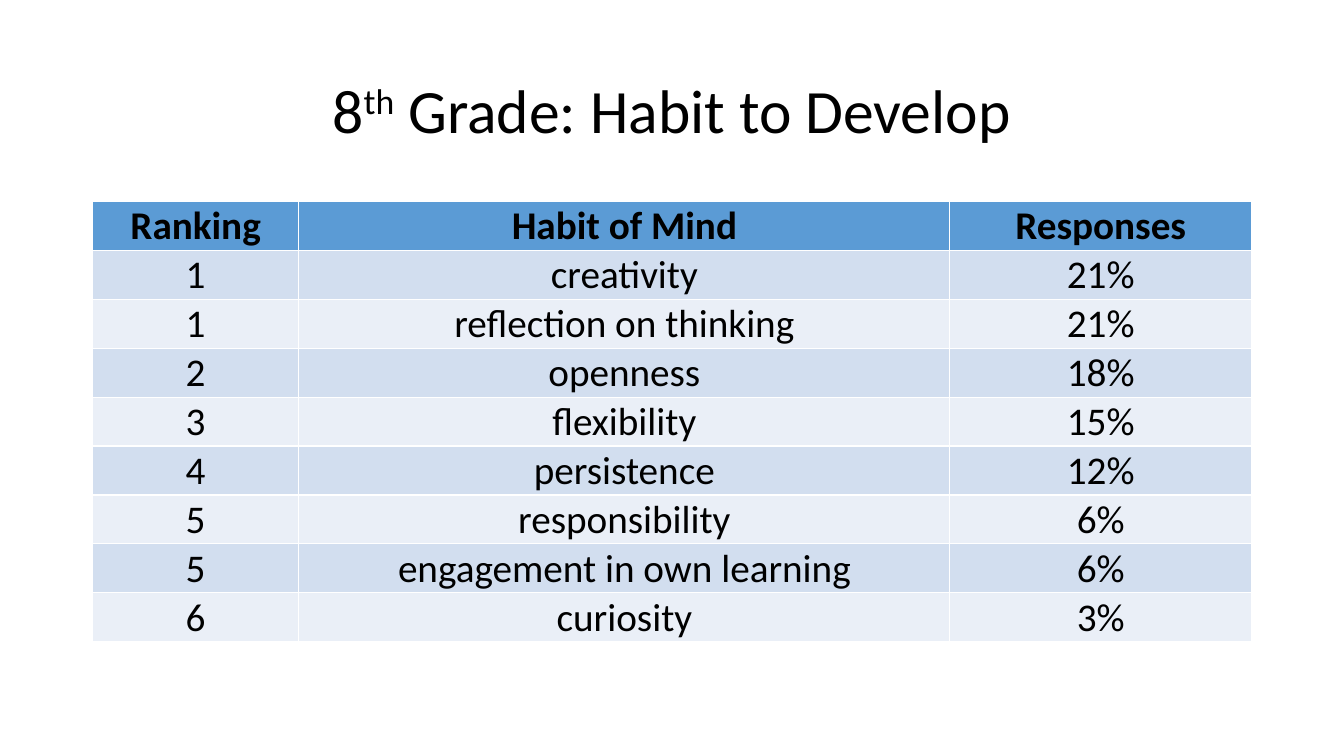
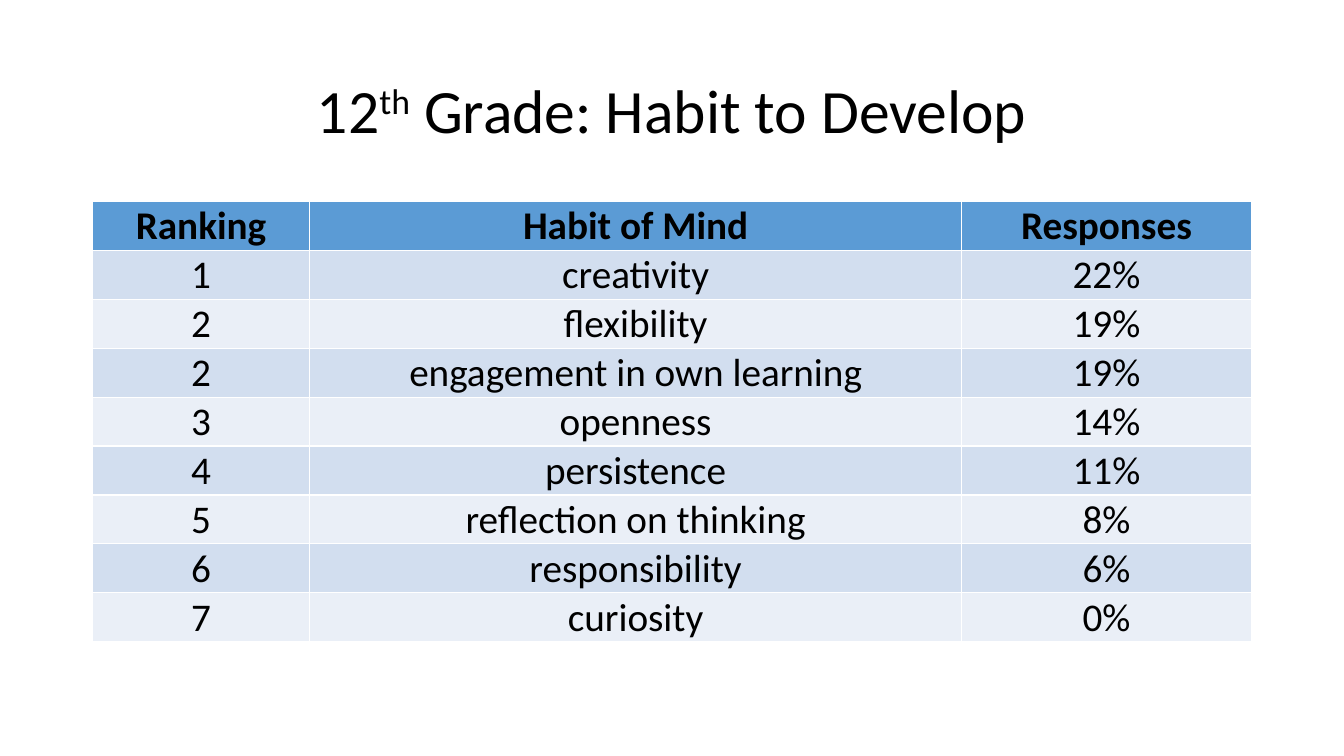
import dataclasses

import pptx
import pptx.dml.color
import pptx.enum.text
import pptx.util

Pt = pptx.util.Pt
Rgb = pptx.dml.color.RGBColor.from_string
Align = pptx.enum.text.PP_ALIGN
Anchor = pptx.enum.text.MSO_ANCHOR
Fit = pptx.enum.text.MSO_AUTO_SIZE


@dataclasses.dataclass(frozen=True)
class Theme:
    face: str = "Calibri"
    ink: str = "000000"
    head: str = "5B9BD5"
    bands: tuple = ("D2DEEF", "EAEFF7")
    big: int = 44
    body: int = 28


class Deck:
    """Build ranking slides that share one theme."""

    left, width = 66, 828

    def __init__(self, theme):
        self.theme = theme
        self.file = pptx.Presentation()
        self.file.slide_width = Pt(960)
        self.file.slide_height = Pt(540)
        self.slide = None

    def add(self):
        self.slide = self.file.slides.add_slide(self.file.slide_layouts[5])

    def style(self, run, size, bold=False):
        font = run.font
        font.name = self.theme.face
        font.size = Pt(size)
        font.bold = bold
        font.color.rgb = Rgb(self.theme.ink)

    def title(self, grade):
        shape = self.slide.shapes.title
        shape.left, shape.top = Pt(self.left), Pt(28.8)
        shape.width, shape.height = Pt(self.width), Pt(104.4)
        frame = shape.text_frame
        frame.auto_size = Fit.NONE
        frame.vertical_anchor = Anchor.MIDDLE
        para = frame.paragraphs[0]
        para.alignment = Align.CENTER
        para.line_spacing = 0.9
        for text, base in ((grade, 0), ("th", 30000), (" Grade: Habit to Develop", 0)):
            run = para.add_run()
            run.text = text
            self.style(run, self.theme.big)
            if base:
                run._r.get_or_add_rPr().set("baseline", str(base))

    def cell(self, cell, text, fill, bold):
        cell.fill.solid()
        cell.fill.fore_color.rgb = Rgb(fill)
        cell.vertical_anchor = Anchor.BOTTOM
        cell.margin_left = cell.margin_right = cell.margin_top = Pt(0.7)
        cell.margin_bottom = 0
        cell.text_frame.text = text
        para = cell.text_frame.paragraphs[0]
        para.alignment = Align.CENTER
        self.style(para.runs[0], self.theme.body, bold)

    def table(self, rows, rank, habit):
        rows = [("Ranking", "Habit of Mind", "Responses"), *rows]
        grid = self.slide.shapes.add_table(
            len(rows), 3, Pt(self.left), Pt(144), Pt(self.width), Pt(309)
        ).table
        for col, wide in zip(grid.columns, (rank, habit, self.width - rank - habit)):
            col.width = Pt(wide)
        for y, row in enumerate(rows):
            fill = self.theme.bands[(y - 1) % 2] if y else self.theme.head
            for x, text in enumerate(row):
                self.cell(grid.cell(y, x), text, fill, y == 0)


EIGHTH = [
    ("1", "creativity", "21%"),
    ("1", "reflection on thinking", "21%"),
    ("2", "openness", "18%"),
    ("3", "flexibility", "15%"),
    ("4", "persistence", "12%"),
    ("5", "responsibility", "6%"),
    ("5", "engagement in own learning", "6%"),
    ("6", "curiosity", "3%"),
]
TWELFTH = [
    ("1", "creativity", "22%"),
    ("2", "flexibility", "19%"),
    ("2", "engagement in own learning", "19%"),
    ("3", "openness", "14%"),
    ("4", "persistence", "11%"),
    ("5", "reflection on thinking", "8%"),
    ("6", "responsibility", "6%"),
    ("7", "curiosity", "0%"),
]


def main():
    deck = Deck(Theme())
    for grade, rows, rank, habit in (
        ("8", EIGHTH, 147.5, 465),
        ("12", TWELFTH, 155.2, 465.6),
    ):
        deck.add()
        deck.title(grade)
        deck.table(rows, rank, habit)
    deck.file.save("out.pptx")


if __name__ == "__main__":
    main()
